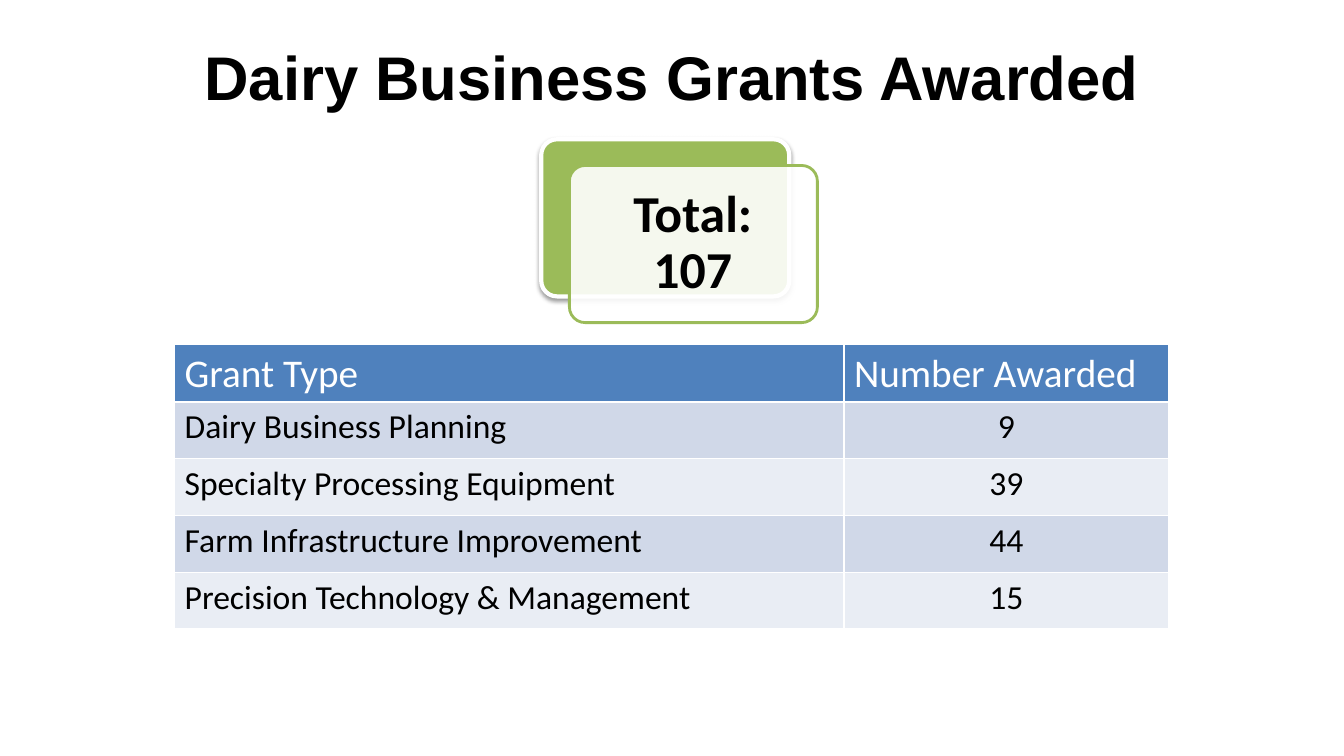
from lxml import etree
from pptx import Presentation
from pptx.dml.color import RGBColor
from pptx.enum.shapes import MSO_SHAPE as Preset
from pptx.enum.text import MSO_ANCHOR as Anchor, PP_ALIGN as Align
from pptx.oxml import parse_xml
from pptx.oxml.ns import nsdecls, qn
from pptx.util import Cm, Pt

BLACK = RGBColor(0x00, 0x00, 0x00)
WHITE = RGBColor(0xFF, 0xFF, 0xFF)
GREEN = RGBColor(0x9B, 0xBB, 0x59)
BLUE = RGBColor(0x4F, 0x81, 0xBD)
BANDS = [RGBColor(0xE9, 0xED, 0xF4), RGBColor(0xD0, 0xD8, 0xE8)]

GRANTS = [
    ("Grant Type", "Number Awarded"),
    ("Dairy Business Planning", "9"),
    ("Specialty Processing Equipment", "39"),
    ("Farm Infrastructure Improvement", "44"),
    ("Precision Technology & Management", "15"),
]


def style(paragraph, font_name, size, color, bold, align):
    paragraph.alignment = align
    font = paragraph.font
    font.name, font.size, font.bold = font_name, Pt(size), bold
    font.color.rgb = color


def add_card(group, left, top, fill, line, weight):
    card = group.shapes.add_shape(
        Preset.ROUNDED_RECTANGLE, Cm(left), Cm(top), Cm(6.25), Cm(3.96))
    card.adjustments[0] = 0.1
    card.shadow.inherit = False
    card.fill.solid()
    card.fill.fore_color.rgb = fill
    card.line.color.rgb = line
    card.line.width = Pt(weight)
    return card


prs = Presentation()
prs.slide_width, prs.slide_height = Cm(33.87), Cm(19.05)
slide = prs.slides.add_slide(prs.slide_layouts[6])

title = slide.shapes.add_textbox(Cm(1.7), Cm(0.33), Cm(30.48), Cm(3.18)).text_frame
title.word_wrap = True
title.vertical_anchor = Anchor.MIDDLE
title.text = "Dairy Business Grants Awarded"
style(title.paragraphs[0], "Arial", 44, BLACK, True, Align.CENTER)

badge = slide.shapes.add_group_shape()
back_card = add_card(badge, 13.64, 3.51, GREEN, WHITE, 3)
back_card._element.spPr.find(qn("a:effectLst")).append(parse_xml(
    f'<a:outerShdw {nsdecls("a")} blurRad="39370" dist="20320" dir="5400000" '
    'rotWithShape="0"><a:srgbClr val="000000"><a:alpha val="38000"/></a:srgbClr>'
    '</a:outerShdw>'))

front_card = add_card(badge, 14.35, 4.17, WHITE, GREEN, 2)
front_color = front_card._element.spPr.find(qn("a:solidFill")).find(qn("a:srgbClr"))
etree.SubElement(front_color, qn("a:alpha")).set("val", "90000")

total = badge.shapes.add_textbox(Cm(14.45), Cm(4.27), Cm(6.02), Cm(3.73)).text_frame
total.word_wrap = True
total.vertical_anchor = Anchor.MIDDLE
total.margin_left = total.margin_right = Cm(0.45)
total.margin_top = total.margin_bottom = Cm(0.38)
total.text = "Total: 107"
total.paragraphs[0].line_spacing = 0.9
style(total.paragraphs[0], "Calibri", 37, BLACK, True, Align.CENTER)

grants = slide.shapes.add_table(
    len(GRANTS), 2, Cm(4.4), Cm(8.69), Cm(25.05), Cm(7.15)).table
grants.columns[0].width, grants.columns[1].width = Cm(16.87), Cm(8.18)

for r, values in enumerate(GRANTS):
    for c, value in enumerate(values):
        cell = grants.cell(r, c)
        cell.text = value
        cell.fill.solid()
        cell.fill.fore_color.rgb = BANDS[r % 2] if r else BLUE
        size, color = (24, BLACK) if r else (28, WHITE)
        align = Align.CENTER if r and c else Align.LEFT
        style(cell.text_frame.paragraphs[0], "Calibri", size, color, False, align)

prs.save("out.pptx")
